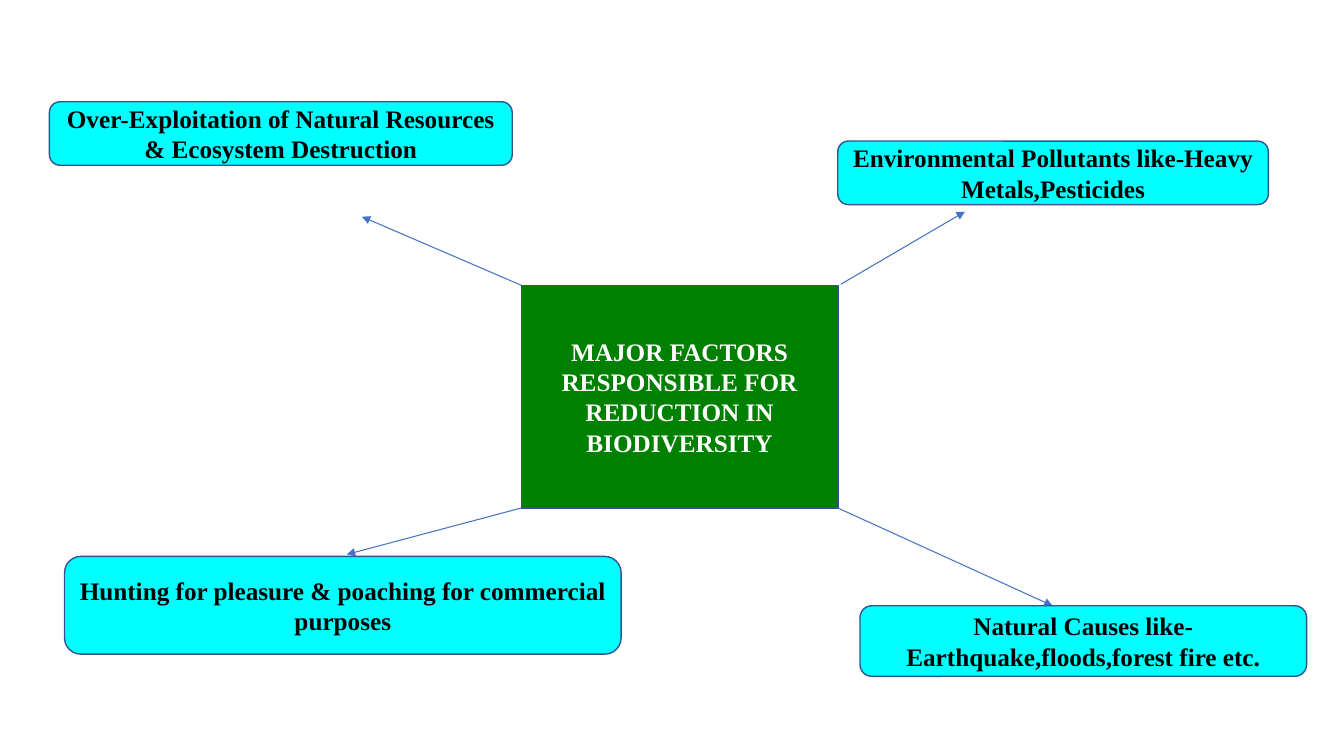
from pptx import Presentation
from pptx.dml.color import RGBColor
from pptx.enum.shapes import MSO_CONNECTOR, MSO_SHAPE
from pptx.enum.text import MSO_ANCHOR, PP_ALIGN
from pptx.oxml.ns import qn
from pptx.util import Pt
from lxml import etree

PX = 9144  # EMU, 100 px to the inch
BLANK_LAYOUT = 6

RECTANGLE = MSO_SHAPE.RECTANGLE
ROUNDED = MSO_SHAPE.ROUNDED_RECTANGLE
STRAIGHT = MSO_CONNECTOR.STRAIGHT
MIDDLE = MSO_ANCHOR.MIDDLE
CENTER = PP_ALIGN.CENTER

WHITE = RGBColor(0xFF, 0xFF, 0xFF)
BLACK = RGBColor(0x00, 0x00, 0x00)
GREEN = RGBColor(0x00, 0x80, 0x00)
CYAN = RGBColor(0x00, 0xFF, 0xFF)
OUTLINE_BLUE = RGBColor(0x31, 0x53, 0x8F)
ARROW_BLUE = RGBColor(0x44, 0x72, 0xC4)

TOPIC = "MAJOR FACTORS RESPONSIBLE FOR REDUCTION IN BIODIVERSITY"
TOPIC_AREA = (517, 283, 314, 221)

# text, box (left, top, width, height), arrow start, arrow tip
FACTORS = [
    ("Over-Exploitation of Natural Resources & Ecosystem Destruction",
     (49, 101, 459, 63), (517, 283), (359, 215)),
    ("Environmental Pollutants like-Heavy Metals,Pesticides",
     (831, 140, 427, 63), (834, 282), (957, 210)),
    ("Natural Causes like-Earthquake,floods,forest fire etc.",
     (853, 601, 443, 70), (831, 504), (1044, 601)),
    ("Hunting for pleasure & poaching for commercial purposes",
     (64, 552, 552, 97), (517, 504), (344, 550)),
]


class Diagram:
    font_name = "Times New Roman"
    font_size = Pt(18)

    def __init__(self, slide):
        self.shapes = slide.shapes

    def box(self, preset, area, text, fill, text_color):
        box = self.shapes.add_shape(preset, *(n * PX for n in area))
        box.shadow.inherit = False
        box.fill.solid()
        box.fill.fore_color.rgb = fill
        box.line.color.rgb = OUTLINE_BLUE
        box.line.width = Pt(1)

        frame = box.text_frame
        frame.word_wrap = True
        frame.vertical_anchor = MIDDLE
        paragraph = frame.paragraphs[0]
        paragraph.text = text
        paragraph.alignment = CENTER
        font = paragraph.font
        font.name = self.font_name
        font.size = self.font_size
        font.bold = True
        font.color.rgb = text_color

    def arrow(self, start, tip):
        arrow = self.shapes.add_connector(
            STRAIGHT, *(n * PX for n in start + tip))
        arrow.line.color.rgb = ARROW_BLUE
        arrow.line.width = Pt(0.75)
        outline = arrow.line._get_or_add_ln()
        etree.SubElement(outline, qn("a:tailEnd"), type="triangle")
        etree.SubElement(outline.getparent(), qn("a:effectLst"))


def main():
    prs = Presentation()
    prs.slide_width = 1333 * PX
    prs.slide_height = 750 * PX
    diagram = Diagram(prs.slides.add_slide(prs.slide_layouts[BLANK_LAYOUT]))

    diagram.box(RECTANGLE, TOPIC_AREA, TOPIC, GREEN, WHITE)
    for text, area, start, tip in FACTORS:
        diagram.arrow(start, tip)
        diagram.box(ROUNDED, area, text, CYAN, BLACK)

    prs.save("out.pptx")


if __name__ == "__main__":
    main()
